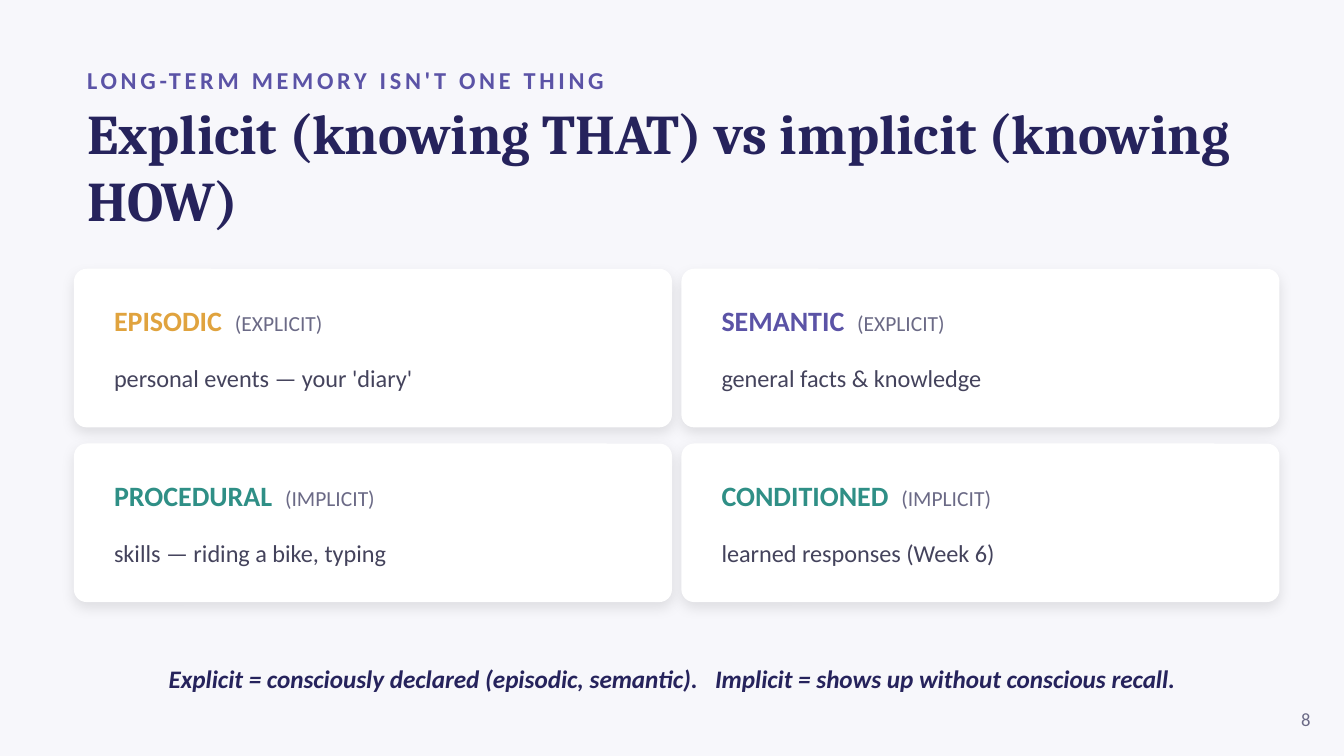
from lxml import etree
from pptx import Presentation
from pptx import util as u
from pptx.dml.color import RGBColor
from pptx.enum import shapes, text
from pptx.oxml import ns

PX = 4572  # EMU per px, 200 px to the inch

BACKGROUND = RGBColor(0xF7, 0xF7, 0xFB)
WHITE = RGBColor(0xFF, 0xFF, 0xFF)
NAVY = RGBColor(0x26, 0x23, 0x5C)
PURPLE = RGBColor(0x5B, 0x53, 0xA6)
AMBER = RGBColor(0xE0, 0xA3, 0x3E)
TEAL = RGBColor(0x2F, 0x8F, 0x86)
INK = RGBColor(0x44, 0x43, 0x5C)
MUTED = RGBColor(0x6B, 0x6A, 0x86)

LEFT, CENTER, RIGHT = text.PP_ALIGN.LEFT, text.PP_ALIGN.CENTER, text.PP_ALIGN.RIGHT


class SlideBuilder:
    """Holds the style and the current slide."""

    body_font = "Calibri"
    title_font = "Cambria"

    def __init__(self, presentation):
        self.slide = presentation.slides.add_slide(presentation.slide_layouts[6])
        fill = self.slide.background.fill
        fill.solid()
        fill.fore_color.rgb = BACKGROUND

    def style(self, font, size, color, bold=False, italic=False, name=None):
        font.name = name or self.body_font
        font.size = u.Pt(size)
        font.color.rgb = color
        font.bold = bold
        font.italic = italic

    def run(self, paragraph, words, spacing=0):
        """Add a run, with extra letter spacing in points."""
        run = paragraph.add_run()
        run.text = words
        if spacing:
            run.font._element.set("spc", str(round(spacing * 100)))
        return run

    def frame(self, left, top, width, height):
        box = self.slide.shapes.add_textbox(left * PX, top * PX, width * PX, height * PX)
        box.text_frame.word_wrap = True
        box.text_frame.vertical_anchor = text.MSO_ANCHOR.MIDDLE
        return box.text_frame

    def label(self, bounds, runs, size, color, align=LEFT, **look):
        """One paragraph of (words, spacing) runs in one look."""
        paragraph = self.frame(*bounds).paragraphs[0]
        paragraph.alignment = align
        self.style(paragraph.font, size, color, **look)
        for words, spacing in runs:
            self.run(paragraph, words, spacing)

    def panel(self, left, top, width, height):
        """White rounded rectangle with a soft shadow below."""
        shape = self.slide.shapes.add_shape(
            shapes.MSO_SHAPE.ROUNDED_RECTANGLE, left * PX, top * PX, width * PX, height * PX)
        shape.adjustments[0] = 0.08
        shape.fill.solid()
        shape.fill.fore_color.rgb = WHITE
        shape.line.fill.background()
        shape.shadow.inherit = False
        effects = shape._element.spPr.find(ns.qn("a:effectLst"))
        shadow = etree.SubElement(
            effects, ns.qn("a:outerShdw"), blurRad=str(u.Pt(7)), dist=str(u.Pt(3)),
            dir="5400000", algn="bl", rotWithShape="0")
        color = etree.SubElement(shadow, ns.qn("a:srgbClr"), val="000000")
        etree.SubElement(color, ns.qn("a:alpha"), val="10000")

    def card(self, left, top, width, height, name, color, kind, description):
        self.panel(left, top, width, height)
        frame = self.frame(left + 40, top + 28, width - 80, 180)
        heading = frame.paragraphs[0]
        for words, spacing in ((name, 0), (" ", 3.4)):
            self.style(self.run(heading, words, spacing).font, 15, color, bold=True)
        self.style(self.run(heading, f"({kind})").font, 11.5, MUTED)
        detail = frame.add_paragraph()
        detail.space_before = u.Pt(14)
        self.style(detail.font, 13, INK)
        self.run(detail, description)


def main():
    presentation = Presentation()
    presentation.slide_width = 2000 * PX
    presentation.slide_height = 1125 * PX
    builder = SlideBuilder(presentation)

    # Heading
    builder.label((110, 84, 1800, 70), [("LONG-TERM MEMORY ISN'T ONE THING", 2)],
                  13, PURPLE, bold=True)
    builder.label((110, 156, 1780, 180),
                  [("Explicit (knowing THAT) vs implicit (knowing HOW)", 0)],
                  30, NAVY, bold=True, name=builder.title_font)

    # Two by two grid of memory types
    memory_types = [
        ("EPISODIC", AMBER, "EXPLICIT", "personal events — your 'diary'"),
        ("SEMANTIC", PURPLE, "EXPLICIT", "general facts & knowledge"),
        ("PROCEDURAL", TEAL, "IMPLICIT", "skills — riding a bike, typing"),
        ("CONDITIONED", TEAL, "IMPLICIT", "learned responses (Week 6)"),
    ]
    for index, memory_type in enumerate(memory_types):
        row, column = divmod(index, 2)
        builder.card(110 + column * 904, 400 + row * 260, 890, 236, *memory_type)

    # Summary and page number
    builder.label((110, 970, 1780, 80),
                  [("Explicit = consciously declared (episodic, semantic).", 0), (" ", 6.1),
                   ("Implicit = shows up without conscious recall.", 0)],
                  13.5, NAVY, CENTER, bold=True, italic=True)
    builder.label((1870, 1040, 100, 60), [("8", 0)], 10, MUTED, RIGHT)

    presentation.save("out.pptx")


if __name__ == "__main__":
    main()
